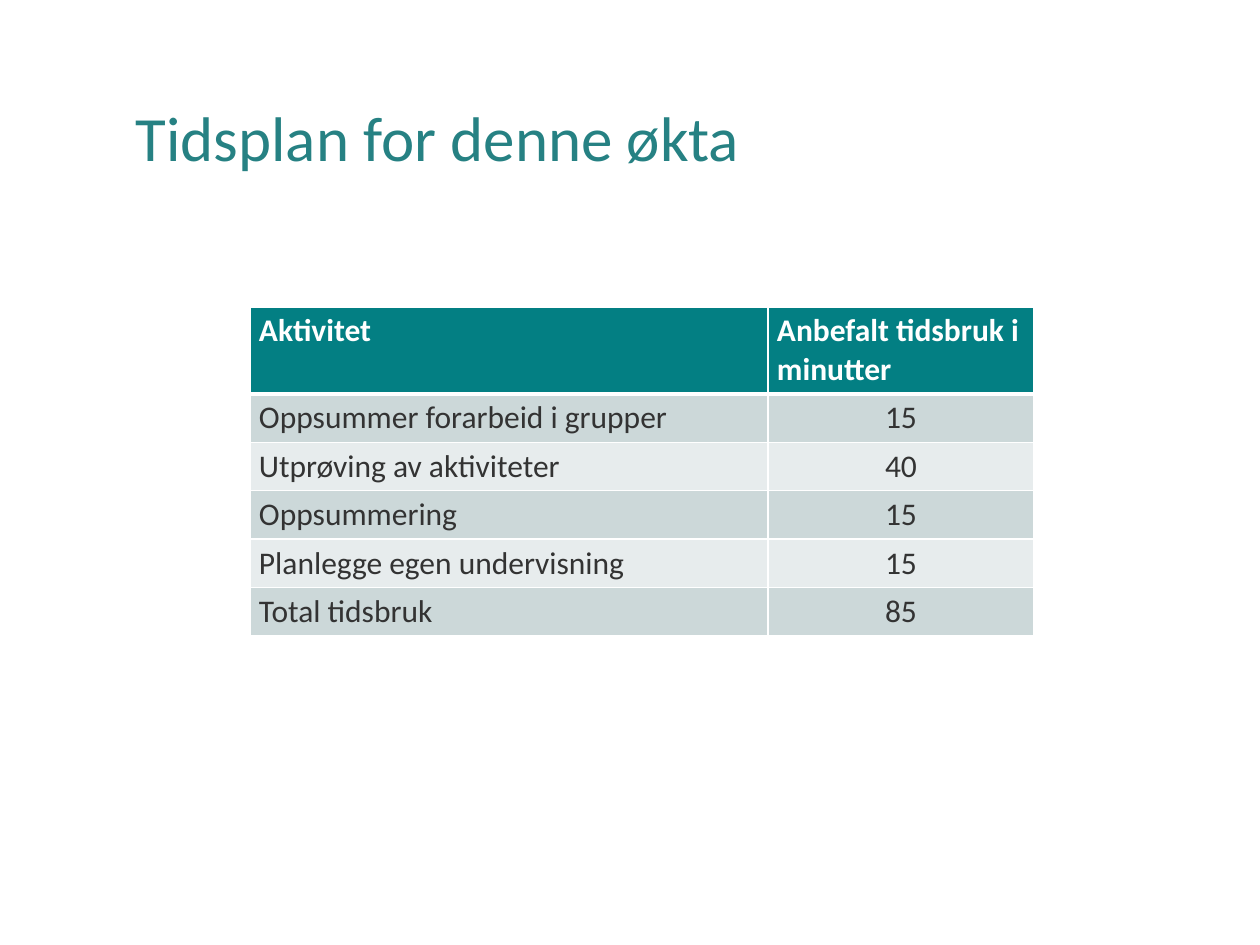
import pptx
import pptx.util
import pptx.dml.color
import pptx.enum.text
import pptx.oxml

PX = 914400 // 126
COLORS = {
    "title": "268183",
    "header": "037F83",
    "odd_row": "CCD8D9",
    "even_row": "E7ECED",
    "text": "333333",
    "white": "FFFFFF",
}
ACTIVITIES = [
    ("Aktivitet", "Anbefalt tidsbruk i minutter"),
    ("Oppsummer forarbeid i grupper", "15"),
    ("Utprøving av aktiviteter", "40"),
    ("Oppsummering", "15"),
    ("Planlegge egen undervisning", "15"),
    ("Total tidsbruk", "85"),
]
COLUMN_WIDTHS = [518, 266]
HEADER_HEIGHT = 81
ROW_HEIGHT = 48


def color(name):
    return pptx.dml.color.RGBColor.from_string(COLORS[name])


def add_border(cell, side, points):
    line = pptx.oxml.parse_xml(
        f'<a:{side} xmlns:a="http://schemas.openxmlformats.org/drawingml/2006/main" '
        f'w="{pptx.util.Pt(points)}"><a:solidFill><a:srgbClr val="{COLORS["white"]}"/>'
        f'</a:solidFill></a:{side}>'
    )
    cell._tc.get_or_add_tcPr().append(line)


presentation = pptx.Presentation()
presentation.slide_width = pptx.util.Inches(10)
presentation.slide_height = pptx.util.Inches(7.5)
slide = presentation.slides.add_slide(presentation.slide_layouts[5])

title = slide.shapes.title
title.left, title.top, title.width, title.height = 123 * PX, 50 * PX, 1045 * PX, 183 * PX
title.text_frame.text = "Tidsplan for denne økta"
title.text_frame.vertical_anchor = pptx.enum.text.MSO_ANCHOR.MIDDLE
paragraph = title.text_frame.paragraphs[0]
paragraph.alignment = pptx.enum.text.PP_ALIGN.LEFT
paragraph.line_spacing = 0.9
paragraph.font.name = "Calibri"
paragraph.font.size = pptx.util.Pt(36)
paragraph.font.color.rgb = color("title")

table_height = HEADER_HEIGHT + ROW_HEIGHT * (len(ACTIVITIES) - 1)
table = slide.shapes.add_table(
    len(ACTIVITIES), len(COLUMN_WIDTHS),
    250 * PX, 307 * PX, sum(COLUMN_WIDTHS) * PX, table_height * PX,
).table
for column, width in zip(table.columns, COLUMN_WIDTHS):
    column.width = width * PX

for row_index, activity in enumerate(ACTIVITIES):
    is_header = row_index == 0
    table.rows[row_index].height = (HEADER_HEIGHT if is_header else ROW_HEIGHT) * PX
    row_fill = "header" if is_header else "odd_row" if row_index % 2 else "even_row"
    for column_index, text in enumerate(activity):
        cell = table.cell(row_index, column_index)
        cell.text = text
        cell.margin_left = cell.margin_right = 9 * PX
        cell.margin_top = cell.margin_bottom = 5 * PX
        for side in ("lnL", "lnR", "lnT", "lnB"):
            under_header = (row_index, side) in ((0, "lnB"), (1, "lnT"))
            add_border(cell, side, 3 if under_header else 1)
        cell.fill.solid()
        cell.fill.fore_color.rgb = color(row_fill)
        paragraph = cell.text_frame.paragraphs[0]
        if column_index == 1 and not is_header:
            paragraph.alignment = pptx.enum.text.PP_ALIGN.CENTER
        paragraph.font.name = "Calibri"
        paragraph.font.size = pptx.util.Pt(18)
        paragraph.font.bold = is_header
        paragraph.font.color.rgb = color("white" if is_header else "text")

presentation.save("out.pptx")
